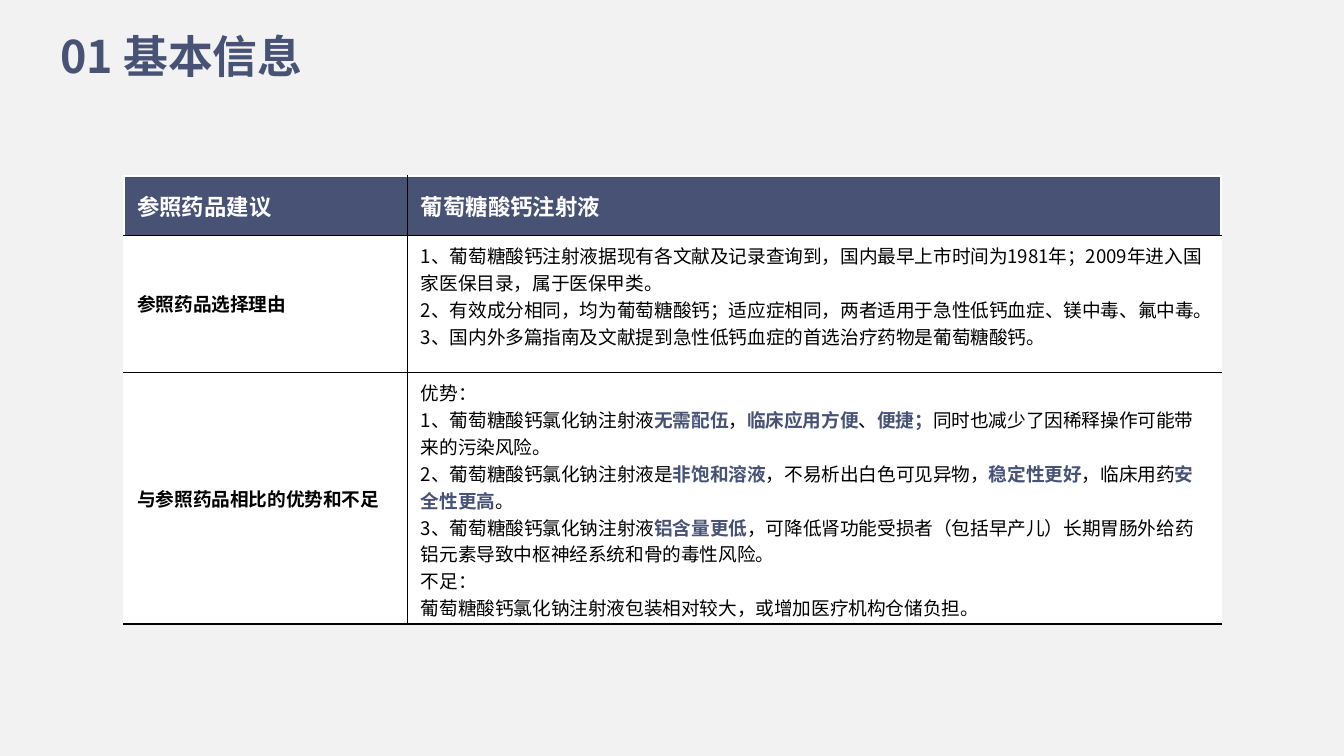
from dataclasses import dataclass

from lxml.etree import SubElement
from pptx import Presentation
from pptx.dml.color import RGBColor
from pptx.enum.text import MSO_ANCHOR as Anchor, MSO_AUTO_SIZE as AutoSize
from pptx.oxml import parse_xml
from pptx.oxml.ns import nsdecls, qn
from pptx.util import Cm, Pt


@dataclass(frozen=True)
class Theme:
    font: str = "Noto Sans CJK SC"
    background: str = "F2F2F2"
    accent: str = "485275"
    ink: str = "000000"
    paper: str = "FFFFFF"
    title_size: float = 24
    header_size: float = 12
    body_size: float = 10
    border_width: float = 1


@dataclass(frozen=True)
class TableRow:
    height: float
    label: str
    details: tuple[str, ...]
    is_header: bool = False
    bottom_margin: float = 0.13


THEME = Theme()
COLUMN_WIDTHS = (5.36, 15.37)

# Asterisks enclose emphasised words.
ROWS = (
    TableRow(1.12, "参照药品建议", ("葡萄糖酸钙注射液",), is_header=True),
    TableRow(2.59, "参照药品选择理由", (
        "1、葡萄糖酸钙注射液据现有各文献及记录查询到，国内最早上市时间为1981年；2009年进入国家医保目录，属于医保甲类。",
        "2、有效成分相同，均为葡萄糖酸钙；适应症相同，两者适用于急性低钙血症、镁中毒、氟中毒。",
        "3、国内外多篇指南及文献提到急性低钙血症的首选治疗药物是葡萄糖酸钙。",
    ), bottom_margin=0.43),
    TableRow(4.75, "与参照药品相比的优势和不足", (
        "优势：",
        "1、葡萄糖酸钙氯化钠注射液*无需配伍*，*临床应用方便*、*便捷；*同时也减少了因稀释操作可能带来的污染风险。",
        "2、葡萄糖酸钙氯化钠注射液是*非饱和溶液*，不易析出白色可见异物，*稳定性更好*，临床用药*安全性更高*。",
        "3、葡萄糖酸钙氯化钠注射液*铝含量更低*，可降低肾功能受损者（包括早产儿）长期胃肠外给药铝元素导致中枢神经系统和骨的毒性风险。",
        "不足：",
        "葡萄糖酸钙氯化钠注射液包装相对较大，或增加医疗机构仓储负担。",
    )),
)


def write_text(text_frame, *lines: str, size: float, color: str, bold: bool = False) -> None:
    """Write one paragraph per line, with words between asterisks emphasised."""
    for line_index, line in enumerate(lines):
        paragraph = text_frame.add_paragraph() if line_index else text_frame.paragraphs[0]
        for part_index, part in enumerate(line.split("*")):
            if not part:
                continue
            emphasised = part_index % 2 == 1
            run = paragraph.add_run()
            run.text = part
            run.font.name = THEME.font
            run.font.size = Pt(size)
            run.font.bold = bold or emphasised
            run.font.color.rgb = RGBColor.from_string(THEME.accent if emphasised else color)
            SubElement(run._r.get_or_add_rPr(), qn("a:ea"), typeface=THEME.font)


def set_borders(cell, left: str, right: str, top: str, bottom: str) -> None:
    properties = cell._tc.get_or_add_tcPr()
    for index, (side, color) in enumerate(zip("LRTB", (left, right, top, bottom))):
        properties.insert(index, parse_xml(
            f'<a:ln{side} {nsdecls("a")} w="{Pt(THEME.border_width)}">'
            f'<a:solidFill><a:srgbClr val="{color}"/></a:solidFill></a:ln{side}>'))


def add_title(slide, text: str) -> None:
    text_frame = slide.shapes.add_textbox(Cm(0.89), Cm(0.41), Cm(6.63), Cm(1.27)).text_frame
    text_frame.word_wrap = True
    text_frame.auto_size = AutoSize.SHAPE_TO_FIT_TEXT
    write_text(text_frame, text, size=THEME.title_size, color=THEME.accent, bold=True)


def fill_cell(cell, row: TableRow, column: int) -> None:
    cell.vertical_anchor = Anchor.MIDDLE
    cell.fill.solid()
    cell.fill.fore_color.rgb = RGBColor.from_string(THEME.accent if row.is_header else THEME.paper)
    is_label = column == 0
    if not is_label:
        cell.margin_bottom = Cm(row.bottom_margin)
    set_borders(
        cell,
        left=THEME.paper if is_label else THEME.ink,
        right=THEME.ink if is_label else THEME.paper,
        top=THEME.paper if row.is_header else THEME.ink,
        bottom=THEME.ink,
    )
    write_text(
        cell.text_frame,
        *((row.label,) if is_label else row.details),
        size=THEME.header_size if row.is_header else THEME.body_size,
        color=THEME.paper if row.is_header else THEME.ink,
        bold=is_label or row.is_header,
    )


def add_comparison_table(slide, rows: tuple[TableRow, ...]) -> None:
    table = slide.shapes.add_table(
        len(rows), len(COLUMN_WIDTHS), Cm(2.34), Cm(3.33),
        Cm(sum(COLUMN_WIDTHS)), Cm(sum(row.height for row in rows))).table
    table.first_row = table.horz_banding = False
    for column, width in enumerate(COLUMN_WIDTHS):
        table.columns[column].width = Cm(width)
    for row_index, row in enumerate(rows):
        table.rows[row_index].height = Cm(row.height)
        for column in range(len(COLUMN_WIDTHS)):
            fill_cell(table.cell(row_index, column), row, column)


def main() -> None:
    presentation = Presentation()
    presentation.slide_width, presentation.slide_height = Cm(25.4), Cm(14.29)
    slide = presentation.slides.add_slide(presentation.slide_layouts[6])
    slide.background.fill.solid()
    slide.background.fill.fore_color.rgb = RGBColor.from_string(THEME.background)
    add_title(slide, "01 基本信息")
    add_comparison_table(slide, ROWS)
    presentation.save("out.pptx")


if __name__ == "__main__":
    main()
